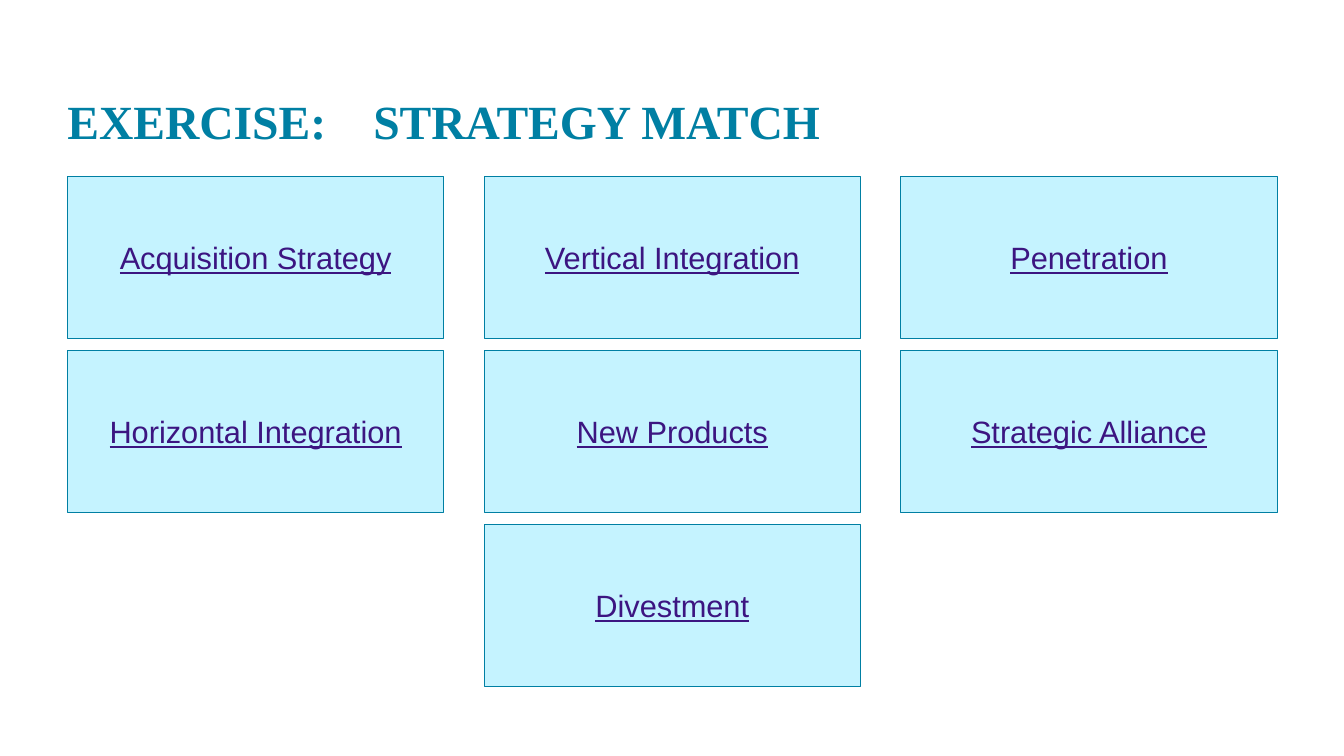
"""Build the strategy match exercise slide."""
from lxml import etree
from pptx import Presentation
from pptx.dml.color import RGBColor
from pptx.enum.shapes import MSO_SHAPE
from pptx.enum.text import MSO_ANCHOR, PP_ALIGN
from pptx.oxml.ns import qn
from pptx.util import Pt

TITLE = "EXERCISE:\tSTRATEGY MATCH"
STRATEGIES = [
    ["Acquisition Strategy", "Vertical Integration", "Penetration"],
    ["Horizontal Integration", "New Products", "Strategic Alliance"],
    [None, "Divestment", None],
]
COLORS = {"teal": "007FA3", "card": "C5F3FF", "link": "3C1581"}

RECT = MSO_SHAPE.RECTANGLE
MIDDLE, BOTTOM = MSO_ANCHOR.MIDDLE, MSO_ANCHOR.BOTTOM
CENTER, LEFT = PP_ALIGN.CENTER, PP_ALIGN.LEFT

SLIDE_W, SLIDE_H = 960, 540
GRID_X, GRID_Y = 48.2, 126
CARD_W, CARD_H = 268.8, 115.5
STEP_X, STEP_Y = 297.6, 124.4
TITLE_BOX = (48.2, 20.2, 864, 86.4)
TITLE_TAB = 218.5


def color(name):
    return RGBColor.from_string(COLORS[name])


def set_text(sp, text, font, size, name, anchor, align, inset):
    tf = sp.text_frame
    tf.word_wrap = True
    tf.vertical_anchor = anchor
    tf.margin_left = tf.margin_right = tf.margin_top = tf.margin_bottom = Pt(inset)
    p = tf.paragraphs[0]
    p.text = text
    p.alignment = align
    r = p.runs[0]
    r.font.name = font
    r.font.size = Pt(size)
    r.font.color.rgb = color(name)
    return p, r


def add_title(s):
    sp = s.shapes.add_textbox(*map(Pt, TITLE_BOX))
    p, r = set_text(sp, TITLE, "Times New Roman", 34, "teal", BOTTOM, LEFT, 0)
    r.font.bold = True
    tabs = etree.SubElement(p._p.get_or_add_pPr(), qn("a:tabLst"))
    etree.SubElement(tabs, qn("a:tab"), pos=str(Pt(TITLE_TAB)), algn="l")


def add_card(s, text, row, col):
    x, y = GRID_X + col * STEP_X, GRID_Y + row * STEP_Y
    sp = s.shapes.add_shape(RECT, Pt(x), Pt(y), Pt(CARD_W), Pt(CARD_H))
    sp.shadow.inherit = False
    sp.fill.solid()
    sp.fill.fore_color.rgb = color("card")
    sp.line.color.rgb = color("teal")
    sp.line.width = Pt(0.75)
    p, r = set_text(sp, text, "Arial", 22, "link", MIDDLE, CENTER, 7.2)
    r.font.underline = True


def main():
    prs = Presentation()
    prs.slide_width, prs.slide_height = Pt(SLIDE_W), Pt(SLIDE_H)
    s = prs.slides.add_slide(prs.slide_layouts[6])
    for row, names in enumerate(STRATEGIES):
        for col, text in enumerate(names):
            if text:
                add_card(s, text, row, col)
    add_title(s)
    prs.save("out.pptx")


if __name__ == "__main__":
    main()
